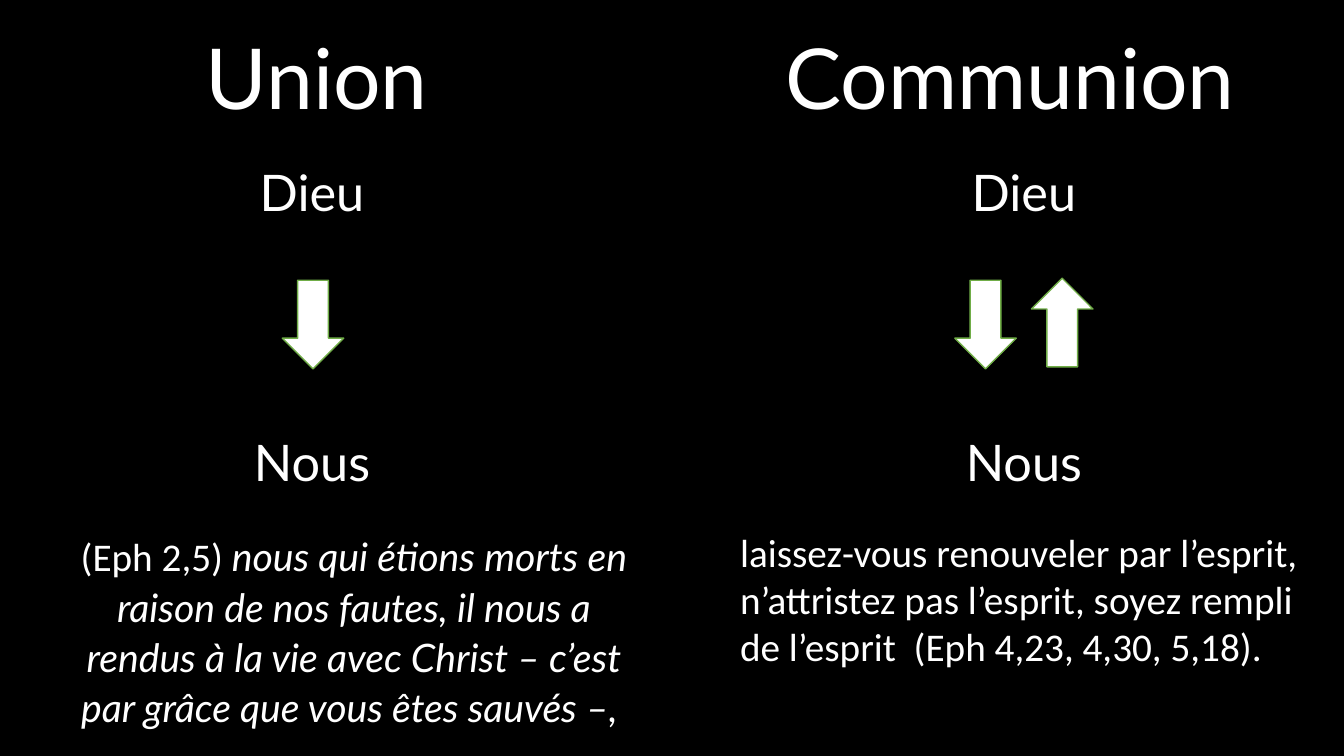
"""Build the slide that sets union with God beside communion with God."""
import pptx
import pptx.dml.color
import pptx.enum.shapes
import pptx.enum.text
import pptx.oxml
import pptx.util

PX = 9144
WHITE = pptx.dml.color.RGBColor(0xFF, 0xFF, 0xFF)
BLACK = pptx.dml.color.RGBColor(0, 0, 0)
GREEN = pptx.dml.color.RGBColor(0x70, 0xAD, 0x47)
LEFT = pptx.enum.text.PP_ALIGN.LEFT
CENTER = pptx.enum.text.PP_ALIGN.CENTER
NO_BULLET = '<a:buNone xmlns:a="http://schemas.openxmlformats.org/drawingml/2006/main"/>'


def place(sp, left, top, width, height):
    """Move and size a shape in px."""
    sp.left, sp.top = left * PX, top * PX
    sp.width, sp.height = width * PX, height * PX


def style_run(r, size, font, italic=False):
    """Give a run its font and white colour."""
    r.font.size = pptx.util.Pt(size)
    r.font.name = font
    r.font.italic = italic
    r.font.color.rgb = WHITE


def write(sp, box, text, size, font="Lato", align=CENTER, spacing=1.07):
    """Place a text shape, fill it and return its paragraph."""
    place(sp, *box)
    tf = sp.text_frame
    tf.word_wrap = True
    tf.auto_size = pptx.enum.text.MSO_AUTO_SIZE.NONE
    tf.vertical_anchor = pptx.enum.text.MSO_ANCHOR.TOP
    tf.text = text
    p = tf.paragraphs[0]
    pPr = p._p.get_or_add_pPr()
    pPr.set("marL", "0")
    pPr.set("indent", "0")
    pPr.append(pptx.oxml.parse_xml(NO_BULLET))
    p.alignment = align
    p.line_spacing = spacing
    p.space_before = pptx.util.Pt(0)
    p.space_after = pptx.util.Pt(8)
    style_run(p.runs[0], size, font)
    return p


def add_label(s, box, text, size, align=CENTER):
    """Add a text box with one line."""
    write(s.shapes.add_textbox(0, 0, 0, 0), box, text, size, align=align)


def add_arrow(s, left, top, rotation=0):
    """Add a white block arrow that points down unless rotated."""
    sp = s.shapes.add_shape(pptx.enum.shapes.MSO_SHAPE.DOWN_ARROW, 0, 0, 0, 0)
    place(sp, left, top, 61, 88)
    sp.rotation = rotation
    sp.shadow.inherit = False
    sp.fill.solid()
    sp.fill.fore_color.rgb = WHITE
    sp.line.color.rgb = GREEN
    sp.line.width = pptx.util.Pt(1)


def main():
    """Build and save the slide."""
    prs = pptx.Presentation()
    prs.slide_width, prs.slide_height = 1333 * PX, 750 * PX
    s = prs.slides.add_slide(prs.slide_layouts[3])
    s.background.fill.solid()
    s.background.fill.fore_color.rgb = BLACK

    write(s.shapes.title, (194, 13, 304, 110), "Union", 60, align=LEFT)
    add_label(s, (769, 13, 508, 110), "Communion", 60, LEFT)

    for left in (39, 745):
        for top, name in ((151, "Dieu"), (419, "Nous")):
            add_label(s, (left, top, 541, 80), name, 36)

    add_arrow(s, 280, 278)
    add_arrow(s, 947, 278)
    add_arrow(s, 1023, 276, 180)

    p = write(s.placeholders[1], (52, 520, 598, 209), "(Eph 2,5) ", 28, "Calibri")
    r = p.add_run()
    r.text = ("nous qui étions morts en raison de nos fautes, il nous a rendus "
              "à la vie avec Christ – c’est par grâce que vous êtes sauvés –, ")
    style_run(r, 28, "Lato", italic=True)
    write(s.placeholders[2], (724, 519, 598, 151),
          "laissez-vous renouveler par l’esprit, n’attristez pas l’esprit, "
          "soyez rempli de l’esprit  (Eph 4,23, 4,30, 5,18).",
          28, "Calibri", LEFT, 1.0)

    prs.save("out.pptx")


if __name__ == "__main__":
    main()
